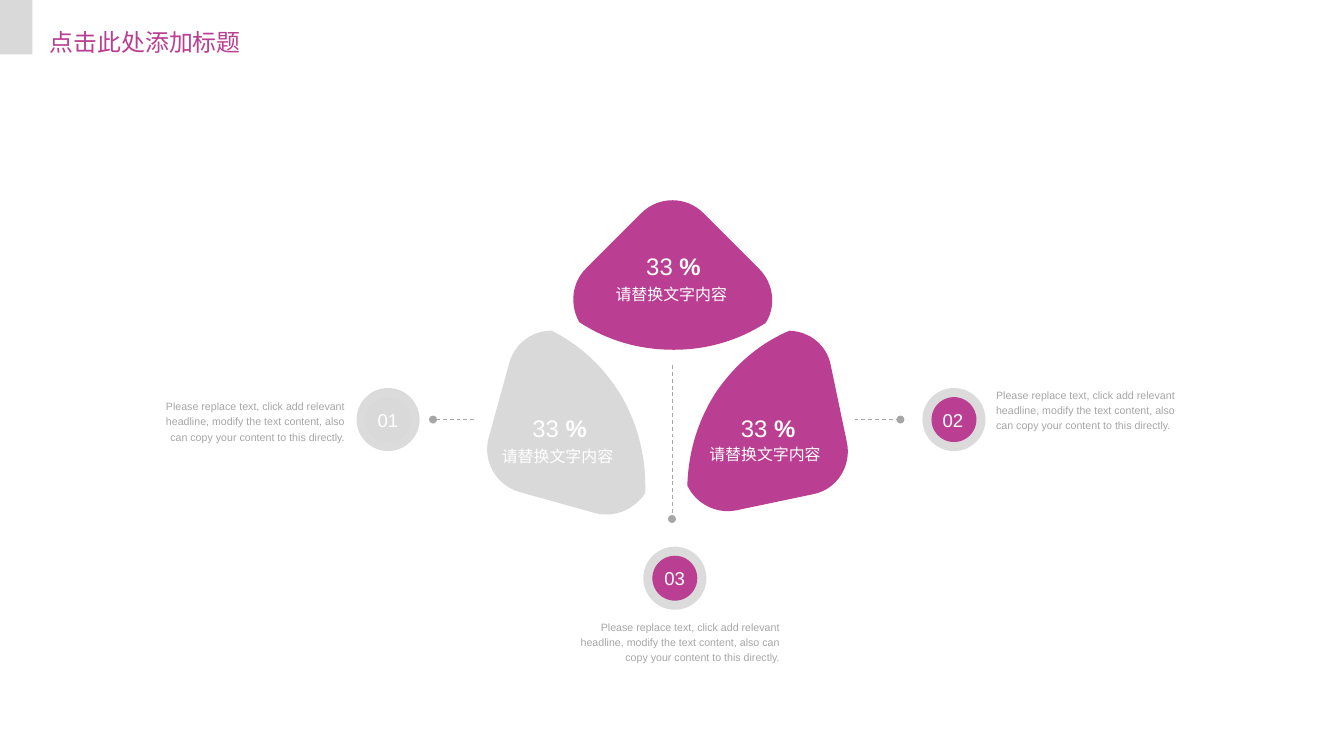
from lxml import etree
from pptx import Presentation
from pptx import util as u
from pptx.dml.color import RGBColor
from pptx.enum import dml, shapes, text
from pptx.oxml import ns

MAGENTA = RGBColor(0xBA, 0x3E, 0x91)
SILVER = RGBColor(0xD9, 0xD9, 0xD9)
RING = RGBColor(0xDB, 0xDB, 0xDB)
GRAY = RGBColor(0xA6, 0xA6, 0xA6)
WHITE = RGBColor(0xFF, 0xFF, 0xFF)
BODY = ("Please replace text, click add relevant headline, modify the text content, "
        "also can copy your content to this directly.")
LEFT, CENTER, RIGHT = text.PP_ALIGN.LEFT, text.PP_ALIGN.CENTER, text.PP_ALIGN.RIGHT
GROW, FIXED = text.MSO_AUTO_SIZE.SHAPE_TO_FIT_TEXT, text.MSO_AUTO_SIZE.NONE

deck = Presentation()
deck.slide_width, deck.slide_height = u.Inches(14.06), u.Inches(7.91)
page = deck.slides.add_slide(deck.slide_layouts[6])


def paint(shape, color):
    shape.shadow.inherit = False
    shape.fill.solid()
    shape.fill.fore_color.rgb = color
    shape.line.fill.background()


def write(place, words, size, color, inset=(0, 0), anchor=text.MSO_ANCHOR.TOP,
          font="Arial", fit=GROW, **layout):
    box = page.shapes.add_textbox(*map(u.Inches, place))
    frame = box.text_frame
    across, down = map(u.Inches, inset)
    frame_format = {"word_wrap": True, "auto_size": fit, "vertical_anchor": anchor,
                    "margin_left": across, "margin_right": across,
                    "margin_top": down, "margin_bottom": down}
    for name, value in frame_format.items():
        setattr(frame, name, value)
    para = frame.paragraphs[0]
    for name, value in layout.items():
        setattr(para, name, value)
    for words_part, bold in words:
        span = para.add_run()
        span.text = words_part
        for name, value in {"size": u.Pt(size), "name": font, "bold": bold}.items():
            setattr(span.font, name, value)
        span.font.color.rgb = color
        latin = span.font._element.find(ns.qn("a:latin"))
        latin.addnext(etree.Element(ns.qn("a:ea"), typeface=font))


corner = page.shapes.add_shape(shapes.MSO_SHAPE.RECTANGLE, 0, 0, u.Inches(0.34), u.Inches(0.57))
paint(corner, SILVER)

badges = [
    ("03", 7.06, 6.05, MAGENTA, (6.91, 5.89, 0.31, 0.31), FIXED, (5.83, 6.47, 2.33, 0.47), RIGHT),
    ("02", 9.98, 4.39, MAGENTA, (9.82, 4.23, 0.31, 0.32), GROW, (10.42, 4.04, 2.05, 0.47), LEFT),
    ("01", 4.06, 4.39, SILVER, (3.91, 4.23, 0.31, 0.32), GROW, (1.56, 4.16, 2.05, 0.47), RIGHT),
]
for number, x, y, color, number_place, fit, body_place, align in badges:
    for diameter, disc_color in ((0.66, RING), (0.47, color)):
        disc = page.shapes.add_shape(
            shapes.MSO_SHAPE.OVAL, u.Inches(x - diameter / 2), u.Inches(y - diameter / 2),
            u.Inches(diameter), u.Inches(diameter))
        paint(disc, disc_color)
    write(number_place, [(number, False)], 14, WHITE,
          inset=(0.04, 0.04), anchor=text.MSO_ANCHOR.BOTTOM, fit=fit)
    write(body_place, [(BODY, False)], 8, GRAY,
          alignment=align, line_spacing=1.2, space_before=u.Pt(7.9))

for leader in ((7.03, 3.82, 7.03, 5.43), (8.94, 4.39, 9.42, 4.39), (4.96, 4.39, 4.53, 4.39)):
    link = page.shapes.add_connector(shapes.MSO_CONNECTOR.STRAIGHT, *map(u.Inches, leader))
    link.line.color.rgb = GRAY
    link.line.width = u.Pt(0.75)
    link.line.dash_style = dml.MSO_LINE.DASH
    etree.SubElement(link.line._get_or_add_ln(), ns.qn("a:tailEnd"), type="oval")
    etree.SubElement(link._element.spPr, ns.qn("a:effectLst"))

petals = [
    (SILVER, (6.23, 5.37), [
        (6.43, 5.42, 6.64, 5.33, 6.75, 5.16), (6.76, 4.82, 6.69, 4.48, 6.51, 4.16),
        (6.33, 3.85, 6.07, 3.61, 5.77, 3.46), (5.57, 3.46, 5.39, 3.59, 5.33, 3.79),
        (5.11, 4.59), (5.05, 4.83, 5.19, 5.08, 5.44, 5.15)],
     (5.36, 4.15), (5.23, 4.65)),
    (MAGENTA, (8.51, 5.17), [
        (8.76, 5.12, 8.91, 4.87, 8.86, 4.63), (8.69, 3.82),
        (8.65, 3.61, 8.47, 3.47, 8.26, 3.46), (7.95, 3.59, 7.68, 3.82, 7.48, 4.12),
        (7.29, 4.42, 7.2, 4.75, 7.19, 5.08), (7.28, 5.27, 7.49, 5.38, 7.7, 5.34)],
     (7.54, 4.15), (7.4, 4.63)),
    (MAGENTA, (7.36, 2.23), [
        (7.18, 2.05, 6.89, 2.05, 6.71, 2.23), (6.13, 2.81),
        (5.98, 2.96, 5.96, 3.19, 6.06, 3.37), (6.35, 3.56, 6.68, 3.66, 7.05, 3.66),
        (7.4, 3.66, 7.73, 3.56, 8.01, 3.38), (8.12, 3.21, 8.1, 2.97, 7.94, 2.81)],
     (6.55, 2.45), (6.42, 2.95)),
]
for color, start, segments, percent_at, label_at in petals:
    builder = page.shapes.build_freeform(*map(u.Inches, start))
    for segment in segments:
        lengths = [u.Inches(value) for value in segment]
        builder.add_line_segments(list(zip(lengths[::2], lengths[1::2])), close=False)
    builder.add_line_segments([], close=True)
    petal = builder.convert_to_shape()
    paint(petal, color)
    steps = petal._element.findall(".//" + ns.qn("a:lnTo"))
    for segment in segments:
        count = len(segment) // 2
        group, steps = steps[:count], steps[count:]
        if count == 3:
            curve = etree.Element(ns.qn("a:cubicBezTo"))
            group[0].addprevious(curve)
            for step in group:
                curve.append(step[0])
                step.getparent().remove(step)
    write((*label_at, 1.23, 0.25), [("请替换文字内容", False)], 12, WHITE,
          inset=(0.02, 0.02), anchor=text.MSO_ANCHOR.MIDDLE)
    write((*percent_at, 0.99, 0.42), [("33 ", False), ("%", True)], 18, WHITE,
          alignment=CENTER, line_spacing=1.6)

write((0.42, 0.24, 2.36, 0.39), [("点击此处添加标题", False)], 18, MAGENTA,
      inset=(0.1, 0.05), font="Noto Sans CJK SC", fit=FIXED, space_before=u.Pt(10.6))

deck.save("out.pptx")
